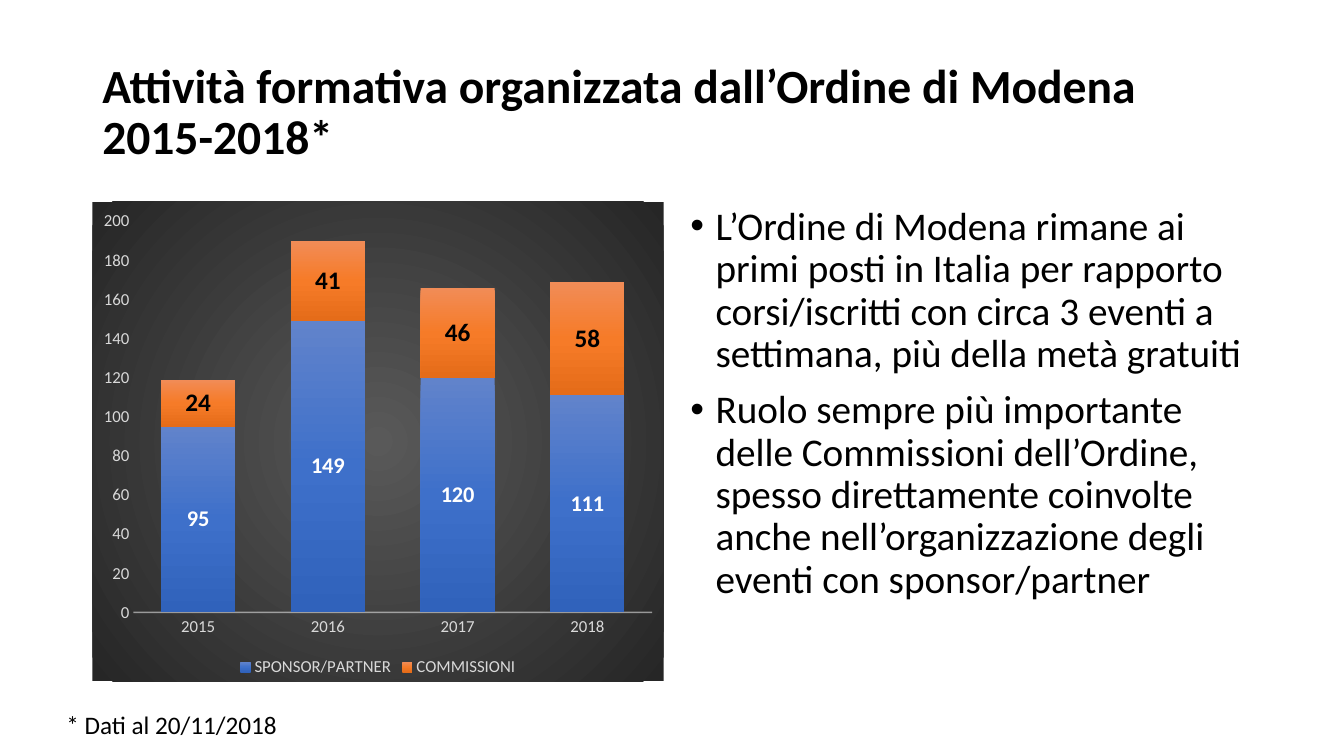
"""Build the slide on training activity organised by the Ordine di Modena."""
from lxml.etree import SubElement
from pptx import Presentation
from pptx.chart.data import CategoryChartData
from pptx.dml.color import RGBColor
from pptx.enum.chart import XL_CHART_TYPE as ChartType
from pptx.enum.chart import XL_LABEL_POSITION as LabelPosition
from pptx.enum.chart import XL_LEGEND_POSITION as LegendPosition
from pptx.enum.chart import XL_TICK_MARK as TickMark
from pptx.enum.text import MSO_ANCHOR as Anchor
from pptx.oxml import parse_xml
from pptx.oxml.ns import nsdecls, qn
from pptx.util import Pt

BLACK, WHITE, PALE = "000000", "FFFFFF", "D9D9D9"
COLUMN_TOP, COLUMN_WIDTH, COLUMN_HEIGHT = 144, 408, 342.6
LEFT_COLUMN, RIGHT_COLUMN = 66, 486


def color(value):
    return RGBColor.from_string(value)


def gradient(stops, direction):
    marks = "".join(
        f'<a:gs pos="{position * 1000}"><a:srgbClr val="{value}"/></a:gs>'
        for position, value in stops
    )
    return (f'<a:gradFill {nsdecls("a")} rotWithShape="1">'
            f"<a:gsLst>{marks}</a:gsLst>{direction}</a:gradFill>")


class SlideBuilder:
    def __init__(self, presentation, font_name):
        self.slide = presentation.slides.add_slide(presentation.slide_layouts[6])
        self.font_name = font_name

    def style(self, font, size, value, bold=False):
        font.name = self.font_name
        font.size = Pt(size)
        font.bold = bold
        font.color.rgb = color(value)

    def text(self, box, paragraphs, size, bold=False, anchor=Anchor.TOP,
             line_spacing=1.0, bullets=False):
        shape = self.slide.shapes.add_textbox(*map(Pt, box))
        frame = shape.text_frame
        frame.word_wrap = True
        frame.vertical_anchor = anchor
        for index, content in enumerate(paragraphs):
            paragraph = frame.add_paragraph() if index else frame.paragraphs[0]
            paragraph.text = content
            paragraph.line_spacing = line_spacing
            paragraph.space_before = Pt(10 if index else 0)
            if bullets:
                self.bullet(paragraph)
            for run in paragraph.runs:
                self.style(run.font, size, BLACK, bold)

    def bullet(self, paragraph):
        properties = paragraph._p.get_or_add_pPr()
        properties.set("marL", str(Pt(18)))
        properties.set("indent", str(-Pt(18)))
        SubElement(properties, qn("a:buFont"), typeface="Arial")
        SubElement(properties, qn("a:buChar"), char="•")

    def stacked_chart(self, box, categories, series_styles):
        data = CategoryChartData()
        data.categories = categories
        for name, values, *_ in series_styles:
            data.add_series(name, values)
        chart = self.slide.shapes.add_chart(
            ChartType.COLUMN_STACKED, *map(Pt, box), data).chart
        self.style(chart.font, 10, BLACK)
        chart.has_title = False
        chart.has_legend = True
        chart.legend.position = LegendPosition.BOTTOM
        chart.legend.include_in_layout = False
        self.style(chart.legend.font, 12, PALE)
        self.chart_background(chart)
        self.axes(chart)
        plot = chart.plots[0]
        plot.gap_width, plot.overlap = 75, 100
        plot.vary_by_categories = False
        for series, (_, _, stops, size, value) in zip(plot.series, series_styles):
            fill = gradient(stops, '<a:lin ang="5400000" scaled="0"/>')
            series._element.get_or_add_spPr().insert(0, parse_xml(fill))
            labels = series.data_labels
            labels.show_value = True
            labels.position = LabelPosition.CENTER
            self.style(labels.font, size, value, bold=True)

    def chart_background(self, chart):
        circle = ('<a:path path="circle"><a:fillToRect l="50000" t="50000" '
                  'r="50000" b="50000"/></a:path>')
        fill = gradient([(0, "595959"), (100, "262626")], circle)
        properties = parse_xml(f'<c:spPr {nsdecls("c", "a")}>{fill}'
                               "<a:ln><a:noFill/></a:ln></c:spPr>")
        chart._chartSpace.find(qn("c:chart")).addnext(properties)

    def axes(self, chart):
        for axis in (chart.category_axis, chart.value_axis):
            axis.major_tick_mark = axis.minor_tick_mark = TickMark.NONE
            axis.has_major_gridlines = False
            self.style(axis.tick_labels.font, 12, PALE)
        line = chart.category_axis.format.line
        line.width = Pt(1)
        line.color.rgb = color("F2F2F2")
        line_color = chart.category_axis._element.find(
            f'{qn("c:spPr")}/{qn("a:ln")}//{qn("a:srgbClr")}')
        SubElement(line_color, qn("a:alpha"), val="54000")
        value_axis = chart.value_axis
        value_axis.format.line.fill.background()
        value_axis.minimum_scale, value_axis.maximum_scale = 0, 200
        value_axis.major_unit = 20


def main():
    presentation = Presentation()
    presentation.slide_width, presentation.slide_height = Pt(960), Pt(540)
    builder = SlideBuilder(presentation, "Calibri")
    builder.text(
        (LEFT_COLUMN, 28.8, 828, 104.4),
        ["Attività formativa organizzata dall’Ordine di Modena \v2015-2018*"],
        34, bold=True, anchor=Anchor.MIDDLE, line_spacing=0.9)
    builder.stacked_chart(
        (LEFT_COLUMN, COLUMN_TOP, COLUMN_WIDTH, COLUMN_HEIGHT),
        ["2015", "2016", "2017", "2018"],
        [("SPONSOR/PARTNER", (95, 149, 120, 111),
          [(0, "6183CB"), (50, "3E70CA"), (100, "3062BB")], 16, WHITE),
         ("COMMISSIONI", (24, 41, 46, 58),
          [(0, "F18C57"), (50, "F67B28"), (100, "E56C19")], 18, BLACK)])
    builder.text(
        (RIGHT_COLUMN, COLUMN_TOP, COLUMN_WIDTH, COLUMN_HEIGHT),
        ["L’Ordine di Modena rimane ai primi posti in Italia per rapporto "
         "corsi/iscritti con circa 3 eventi a settimana, più della metà gratuiti",
         "Ruolo sempre più importante delle Commissioni dell’Ordine, spesso "
         "direttamente coinvolte anche nell’organizzazione degli eventi con "
         "sponsor/partner"],
        28, line_spacing=0.9, bullets=True)
    builder.text((40.3, 503.3, 757.4, 28.8), ["* Dati al 20/11/2018"], 18)
    presentation.save("out.pptx")


if __name__ == "__main__":
    main()
